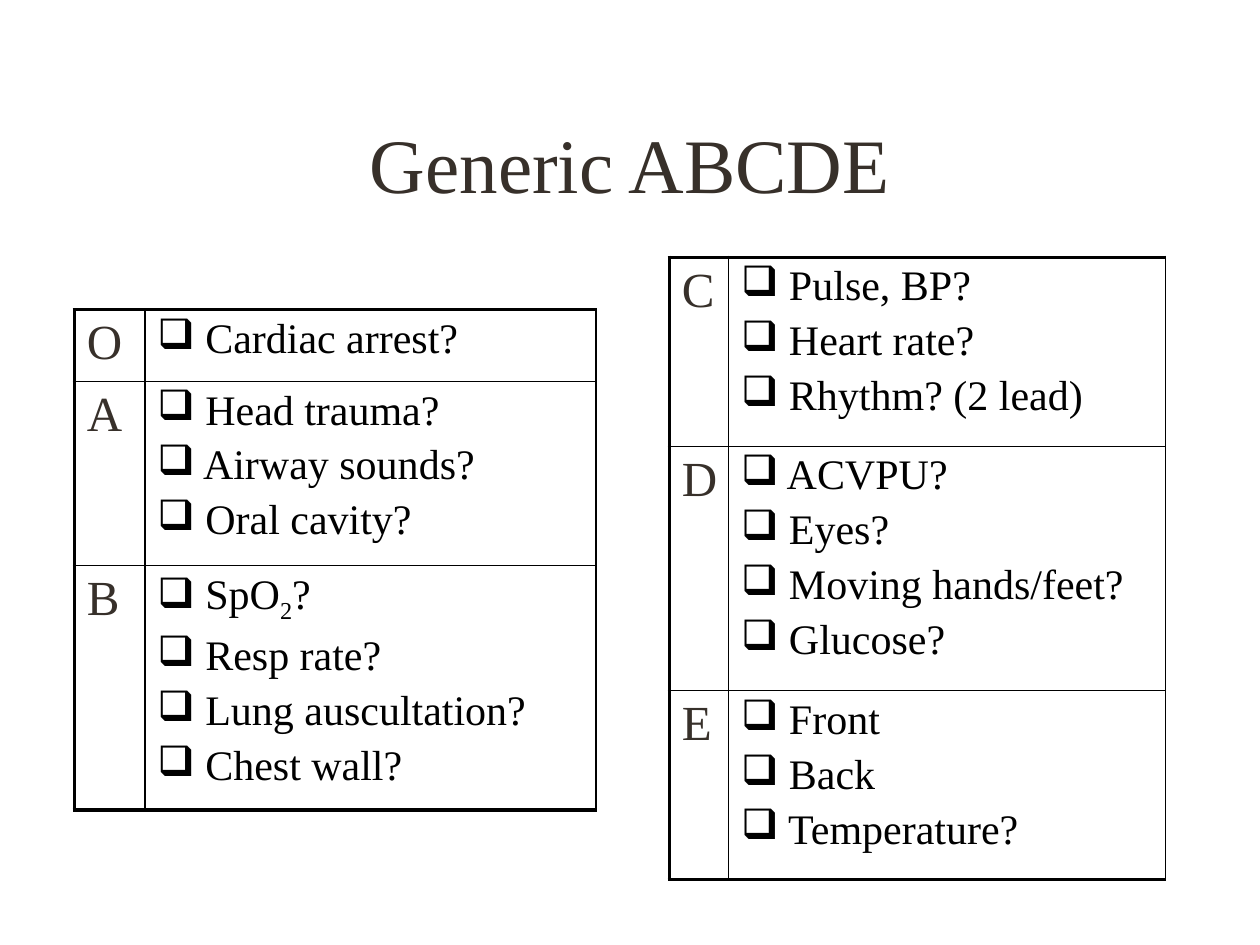
from dataclasses import dataclass

from lxml.etree import SubElement
from pptx import Presentation
from pptx.dml.color import RGBColor
from pptx.enum.text import MSO_ANCHOR, PP_ALIGN
from pptx.oxml import parse_xml
from pptx.oxml.ns import nsdecls, qn
from pptx.util import Pt


@dataclass(frozen=True)
class Theme:
    font: str = "Times New Roman"
    heading: str = "37302A"
    text: str = "000000"
    border: str = "000000"
    title_size: float = 44
    letter_size: float = 28
    check_size: float = 24
    thick: float = 2.25
    thin: float = 1


@dataclass(frozen=True)
class Step:
    letter: str
    height: float
    checks: tuple[str, ...]  # text between bars is subscript


@dataclass(frozen=True)
class Checklist:
    left: float
    top: float
    letter_width: float
    checks_width: float
    steps: tuple[Step, ...]


THEME = Theme()

CHECKLISTS = (
    Checklist(42.5, 177, 40.3, 257.8, (
        Step("O", 41, ("Cardiac arrest?",)),
        Step("A", 105.2, ("Head trauma?", "Airway sounds?", "Oral cavity?")),
        Step("B", 139.7, ("SpO|2|?", "Resp rate?", "Lung auscultation?", "Chest wall?")),
    )),
    Checklist(382.5, 147, 33.8, 249.8, (
        Step("C", 108, ("Pulse, BP?", "Heart rate?", "Rhythm? (2 lead)")),
        Step("D", 139.7, ("ACVPU?", "Eyes?", "Moving hands/feet?", "Glucose?")),
        Step("E", 108, ("Front", "Back", "Temperature?")),
    )),
)


def style_run(run, size: float, color: str) -> None:
    run.font.name = THEME.font
    run.font.size = Pt(size)
    run.font.color.rgb = RGBColor.from_string(color)


def format_paragraph(paragraph, bullet: str = "") -> None:
    """Space the paragraph by a fifth of its line and give it a bullet, if any."""
    properties = paragraph._p.get_or_add_pPr()
    properties.set("marL", "0")
    properties.set("indent", "0")
    before = SubElement(properties, qn("a:spcBef"))
    SubElement(before, qn("a:spcPct")).set("val", "20000")
    if bullet:
        SubElement(properties, qn("a:buChar")).set("char", bullet)
    else:
        SubElement(properties, qn("a:buNone"))


def set_borders(cell, widths: dict[str, float]) -> None:
    properties = cell._tc.get_or_add_tcPr()
    for position, side in enumerate("LRTB"):
        properties.insert(position, parse_xml(
            f'<a:ln{side} {nsdecls("a")} w="{Pt(widths[side])}">'
            f'<a:solidFill><a:srgbClr val="{THEME.border}"/></a:solidFill>'
            f'</a:ln{side}>'))


def write_letter(cell, letter: str) -> None:
    cell.text_frame.text = letter
    paragraph = cell.text_frame.paragraphs[0]
    format_paragraph(paragraph)
    style_run(paragraph.runs[0], THEME.letter_size, THEME.heading)


def write_checks(cell, checks: tuple[str, ...]) -> None:
    frame = cell.text_frame
    for number, check in enumerate(checks):
        paragraph = frame.add_paragraph() if number else frame.paragraphs[0]
        format_paragraph(paragraph, "❑")
        for part, words in enumerate(f" {check}".split("|")):
            run = paragraph.add_run()
            run.text = words
            style_run(run, THEME.check_size, THEME.text)
            if part % 2:
                run.font._element.set("baseline", "-25000")


def draw_checklist(slide, checklist: Checklist) -> None:
    steps = checklist.steps
    widths = (checklist.letter_width, checklist.checks_width)
    table = slide.shapes.add_table(
        len(steps), len(widths), Pt(checklist.left), Pt(checklist.top),
        Pt(sum(widths)), Pt(sum(step.height for step in steps))).table
    table.first_row = table.horz_banding = False
    for column, width in zip(table.columns, widths):
        column.width = Pt(width)
    for row, step in enumerate(steps):
        table.rows[row].height = Pt(step.height)
        write_letter(table.cell(row, 0), step.letter)
        write_checks(table.cell(row, 1), step.checks)
        for column in range(len(widths)):
            cell = table.cell(row, column)
            cell.fill.background()
            set_borders(cell, {
                "L": THEME.thin if column else THEME.thick,
                "R": THEME.thin,
                "T": THEME.thin if row else THEME.thick,
                "B": THEME.thick if row == len(steps) - 1 else THEME.thin,
            })


def write_title(slide, words: str) -> None:
    title = slide.shapes.title
    title.left, title.top, title.width, title.height = Pt(54), Pt(48), Pt(612), Pt(90)
    title.text_frame.text = words
    title.text_frame.vertical_anchor = MSO_ANCHOR.MIDDLE
    paragraph = title.text_frame.paragraphs[0]
    paragraph.alignment = PP_ALIGN.CENTER
    style_run(paragraph.runs[0], THEME.title_size, THEME.heading)


def main() -> None:
    presentation = Presentation()
    presentation.slide_width, presentation.slide_height = Pt(720), Pt(540)
    slide = presentation.slides.add_slide(
        presentation.slide_layouts.get_by_name("Title Only"))
    write_title(slide, "Generic ABCDE")
    for checklist in CHECKLISTS:
        draw_checklist(slide, checklist)
    presentation.save("out.pptx")


if __name__ == "__main__":
    main()
